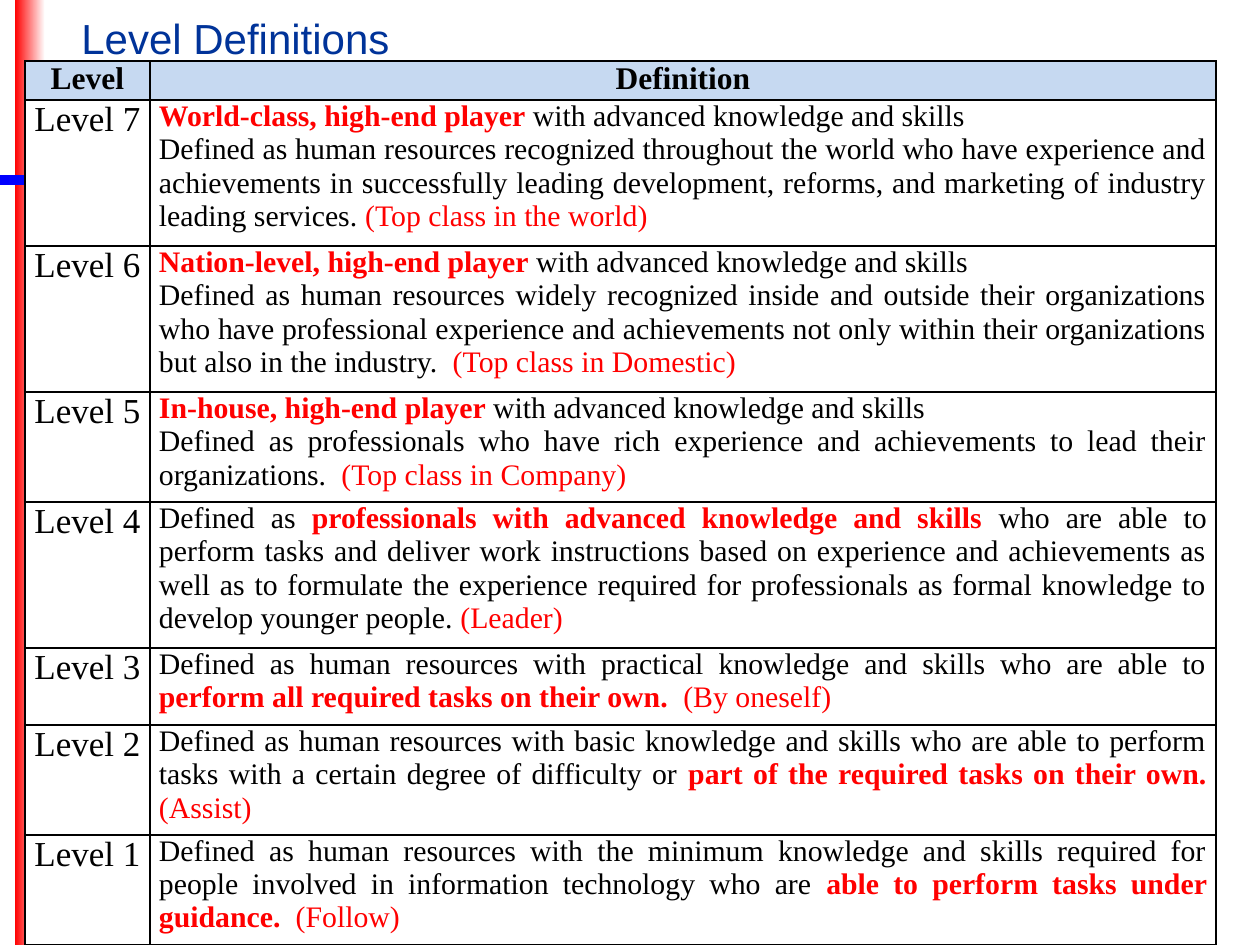
from lxml.etree import SubElement
from pptx import Presentation
from pptx.dml.color import RGBColor
from pptx.enum.shapes import MSO_SHAPE
from pptx.enum.text import MSO_ANCHOR, PP_ALIGN
from pptx.oxml.ns import qn
from pptx.util import Emu, Pt

PX_PER_INCH = 126
BLACK, WHITE, RED, BLUE = "000000", "FFFFFF", "FF0000", "0000FF"
NAVY, HEADER_BLUE = "003399", "C6D9F1"

PLAIN = {"size": Pt(17), "name": "Times New Roman", "bold": False, "color": BLACK}
NOTE = {**PLAIN, "color": RED}
STRONG = {**NOTE, "bold": True}
HEADER = {**PLAIN, "size": Pt(18), "bold": True}
LEVEL = {**PLAIN, "size": Pt(20)}
TITLE = {"size": Pt(24), "name": "Arial", "color": NAVY}

COLUMN_WIDTHS = [125, 1066]
HEADER_HEIGHT = 39
# Level, row height, paragraphs made of (text, format) spans
LEVELS = [
    (7, 146, [
        [("World-class, high-end player ", STRONG),
         ("with advanced knowledge and skills", PLAIN)],
        [("Defined as human resources recognized throughout the world who have "
          "experience and achievements in successfully leading development, reforms, "
          "and marketing of industry leading services. ", PLAIN),
         ("(Top class in the world)", NOTE)]]),
    (6, 146, [
        [("Nation-level, high-end player ", STRONG),
         ("with advanced knowledge and skills", PLAIN)],
        [("Defined as human resources widely recognized inside and outside their "
          "organizations who have professional experience and achievements not only "
          "within their organizations but also in the industry.  ", PLAIN),
         ("(Top class in Domestic)", NOTE)]]),
    (5, 110, [
        [("In-house, high-end player ", STRONG),
         ("with advanced knowledge and skills", PLAIN)],
        [("Defined as professionals who have rich experience and achievements to lead "
          "their organizations.  ", PLAIN),
         ("(Top class in Company)", NOTE)]]),
    (4, 146, [
        [("Defined as ", PLAIN),
         ("professionals with advanced knowledge and skills", STRONG),
         (" who are able to perform tasks and deliver work instructions based on "
          "experience and achievements as well as to formulate the experience required "
          "for professionals as formal knowledge to develop younger people. ", PLAIN),
         ("(Leader)", NOTE)]]),
    (3, 77, [
        [("Defined as human resources with practical knowledge and skills who are "
          "able to ", PLAIN),
         ("perform all required tasks on their own.  ", STRONG),
         ("(By oneself)", NOTE)]]),
    (2, 110, [
        [("Defined as human resources with basic knowledge and skills who are able to "
          "perform tasks with a certain degree of difficulty or ", PLAIN),
         ("part of the required tasks on their own. ", STRONG),
         ("(Assist)", NOTE)]]),
    (1, 110, [
        [("Defined as human resources with the minimum knowledge and skills required "
          "for people involved in information technology who are ", PLAIN),
         ("able to perform tasks under guidance.  ", STRONG),
         ("(Follow)", NOTE)]]),
]


def px(length):
    return Emu(round(length * 914400 / PX_PER_INCH))


def rgb(color):
    return RGBColor.from_string(color)


def write_paragraphs(frame, paragraphs, alignment):
    for index, spans in enumerate(paragraphs):
        para = frame.add_paragraph() if index else frame.paragraphs[0]
        para.alignment = alignment
        for text, style in spans:
            span = para.add_run()
            span.text = text
            for key, value in style.items():
                if key == "color":
                    span.font.color.rgb = rgb(value)
                else:
                    setattr(span.font, key, value)


def add_fading_bar(page, left, top, width, height, color):
    """Add a bar that fades to white from left to right."""
    bar = page.shapes.add_shape(
        MSO_SHAPE.RECTANGLE, px(left), px(top), px(width), px(height))
    bar.shadow.inherit = False
    bar.line.fill.background()
    bar.fill.gradient()
    bar.fill.gradient_angle = 0
    for stop, position, shade in zip(bar.fill.gradient_stops, (0, 1), (color, WHITE)):
        stop.position = position
        stop.color.rgb = rgb(shade)


def add_title(page, text):
    box = page.shapes.add_textbox(px(69), px(0), px(461), px(76))
    box.text_frame.word_wrap = True
    box.text_frame.vertical_anchor = MSO_ANCHOR.MIDDLE
    write_paragraphs(box.text_frame, [[(text, TITLE)]], PP_ALIGN.LEFT)


def add_borders(cell):
    properties = cell._tc.get_or_add_tcPr()
    for side in ("a:lnL", "a:lnR", "a:lnT", "a:lnB"):
        line = SubElement(properties, qn(side), w=str(Pt(1)))
        fill = SubElement(line, qn("a:solidFill"))
        SubElement(fill, qn("a:srgbClr"), val=BLACK)


def fill_cell(cell, paragraphs, alignment, background):
    margins = {"margin_left": 9, "margin_right": 9, "margin_top": 0, "margin_bottom": 0}
    for key, value in margins.items():
        setattr(cell, key, px(value))
    add_borders(cell)
    cell.fill.solid()
    cell.fill.fore_color.rgb = rgb(background)
    write_paragraphs(cell.text_frame, paragraphs, alignment)


def add_level_table(page):
    heights = [HEADER_HEIGHT] + [height for _, height, _ in LEVELS]
    table = page.shapes.add_table(
        len(heights), len(COLUMN_WIDTHS), px(25), px(61),
        px(sum(COLUMN_WIDTHS)), px(sum(heights))).table
    for column, width in zip(table.columns, COLUMN_WIDTHS):
        column.width = px(width)
    for row, height in zip(table.rows, heights):
        row.height = px(height)
    for column, heading in enumerate(("Level", "Definition")):
        fill_cell(table.cell(0, column), [[(heading, HEADER)]],
                  PP_ALIGN.CENTER, HEADER_BLUE)
    for row, (level, _, definition) in enumerate(LEVELS, start=1):
        fill_cell(table.cell(row, 0), [[(f"Level {level}", LEVEL)]],
                  PP_ALIGN.CENTER, WHITE)
        fill_cell(table.cell(row, 1), definition, PP_ALIGN.JUSTIFY, WHITE)


def main():
    deck = Presentation()
    deck.slide_width, deck.slide_height = px(1260), px(945)
    page = deck.slides.add_slide(deck.slide_layouts[6])
    add_fading_bar(page, 15, 0, 30, 945, RED)
    add_fading_bar(page, 0, 175, 1186, 10, BLUE)
    add_title(page, "Level Definitions")
    add_level_table(page)
    deck.save("out.pptx")


if __name__ == "__main__":
    main()
